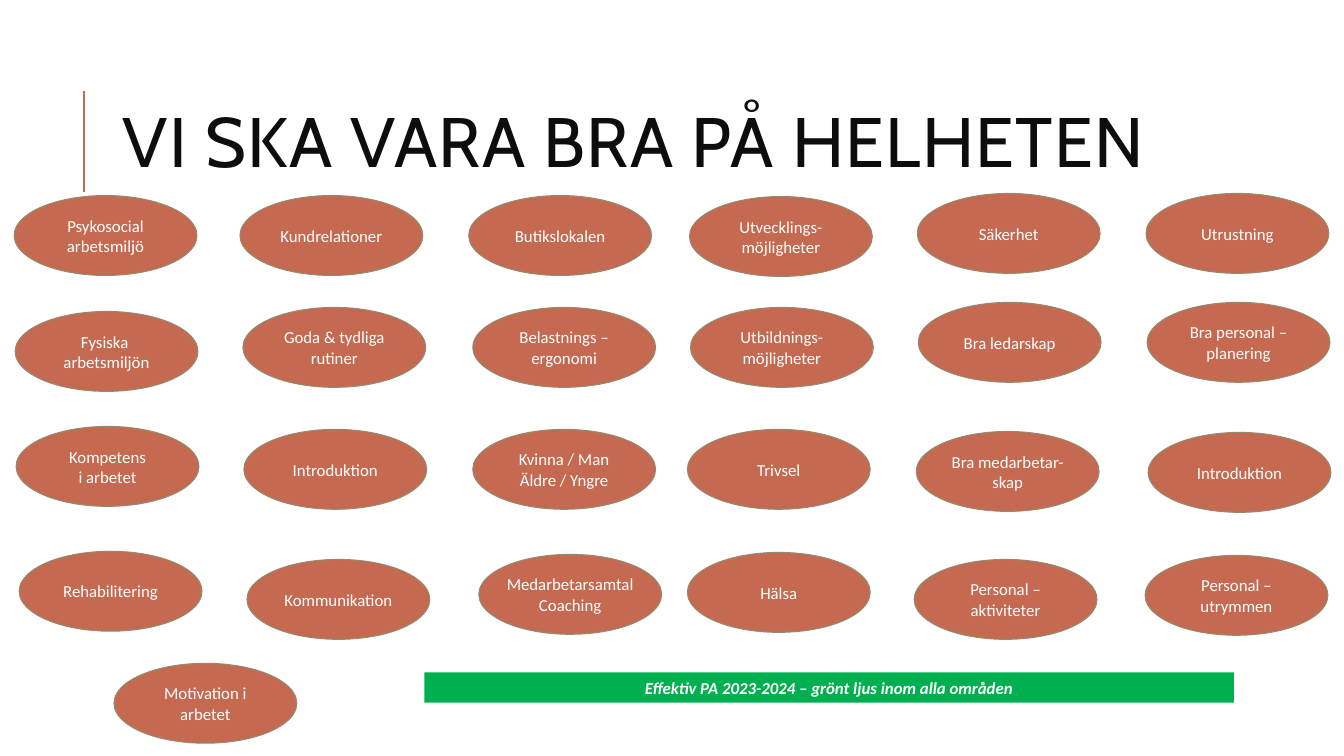
from lxml.etree import SubElement
from pptx import Presentation
from pptx.dml.color import RGBColor
from pptx.enum.shapes import MSO_CONNECTOR, MSO_SHAPE
from pptx.enum.text import MSO_ANCHOR, PP_ALIGN
from pptx.oxml.ns import qn
from pptx.util import Pt

TITLE = "VI SKA VARA BRA PÅ HELHETEN"
BANNER = "Effektiv PA 2023-2024 – grönt ljus inom alla områden"
TOPICS = [
    (10.1, 139.7, "Psykosocial\narbetsmiljö"),
    (171.4, 139.7, "Kundrelationer"),
    (334.8, 139.7, "Butikslokalen"),
    (492.5, 140.4, "Utvecklings-\nmöjligheter"),
    (655.2, 138.2, "Säkerhet"),
    (818.6, 138.2, "Utrustning"),
    (10.8, 222.5, "Fysiska \narbetsmiljön"),
    (173.5, 219.6, "Goda & tydliga\nrutiner"),
    (337.7, 219.6, "Belastnings –\nergonomi"),
    (493.2, 219.6, "Utbildnings-\nmöjligheter"),
    (655.9, 216, "Bra ledarskap"),
    (819.4, 216, "Bra personal –\nplanering"),
    (11.5, 304.6, "Kompetens\ni arbetet"),
    (174.2, 306.7, "Introduktion"),
    (337.7, 306.7, "Kvinna / Man\nÄldre / Yngre"),
    (491, 306.7, "Trivsel"),
    (654.5, 308.2, "Bra medarbetar-\nskap"),
    (820.1, 308.9, "Introduktion"),
    (13.7, 393.8, "Rehabilitering"),
    (176.4, 399.6, "Kommunikation"),
    (342, 396, "Medarbetarsamtal\nCoaching"),
    (491, 394.6, "Hälsa"),
    (653, 399.6, "Personal –\naktiviteter"),
    (817.9, 396.7, "Personal –\nutrymmen"),
    (81.4, 473.8, "Motivation i\narbetet"),
]
TOPIC_WIDTH, TOPIC_HEIGHT = 130.6, 57.1
RUST, OLIVE, GREEN, WHITE, INK = "C66951", "928B70", "00B050", "FFFFFF", "0D0D0D"


def color(value):
    return RGBColor.from_string(value)


def write(frame, text, font, size, ink, align):
    frame.text = text
    for para in frame.paragraphs:
        para.alignment = align
        para.font.name = font
        para.font.size = Pt(size)
        para.font.color.rgb = color(ink)


def add_box(page, kind, bounds, fill, text):
    box = page.shapes.add_shape(kind, *map(Pt, bounds))
    box.shadow.inherit = False
    box.fill.solid()
    box.fill.fore_color.rgb = color(fill)
    write(box.text_frame, text, "Calibri", 12, WHITE, PP_ALIGN.CENTER)
    return box


def add_title(page):
    rule = page.shapes.add_connector(MSO_CONNECTOR.STRAIGHT, Pt(60), Pt(136.8), Pt(60), Pt(64.8))
    rule.line.color.rgb = color(RUST)
    rule.line.width = Pt(1.5)
    SubElement(rule._element.spPr, qn("a:effectLst"))

    frame = page.shapes.add_textbox(Pt(80.6), Pt(46.1), Pt(765.4), Pt(118.1)).text_frame
    frame.word_wrap = True
    frame.vertical_anchor = MSO_ANCHOR.MIDDLE
    write(frame, TITLE, "Cabin", 50, INK, PP_ALIGN.LEFT)
    para = frame.paragraphs[0]
    para.line_spacing = 0.8
    para.runs[0].font._element.set("spc", "100")


def add_topic(page, left, top, text):
    bounds = (left, top, TOPIC_WIDTH, TOPIC_HEIGHT)
    box = add_box(page, MSO_SHAPE.OVAL, bounds, RUST, text)
    box.line.color.rgb = color(OLIVE)
    box.line.width = Pt(0.75)
    box.text_frame.word_wrap = False
    box.text_frame.vertical_anchor = MSO_ANCHOR.MIDDLE


def add_banner(page):
    box = add_box(page, MSO_SHAPE.RECTANGLE, (303.1, 480.2, 578.2, 21.8), GREEN, BANNER)
    box.line.fill.background()
    box.text_frame.word_wrap = True
    box.text_frame.vertical_anchor = MSO_ANCHOR.TOP
    font = box.text_frame.paragraphs[0].font
    font.bold = font.italic = True


def main():
    deck = Presentation()
    deck.slide_width, deck.slide_height = Pt(960), Pt(540)
    page = deck.slides.add_slide(deck.slide_layouts[6])
    add_title(page)
    for left, top, text in TOPICS:
        add_topic(page, left, top, text)
    add_banner(page)
    deck.save("out.pptx")


if __name__ == "__main__":
    main()
